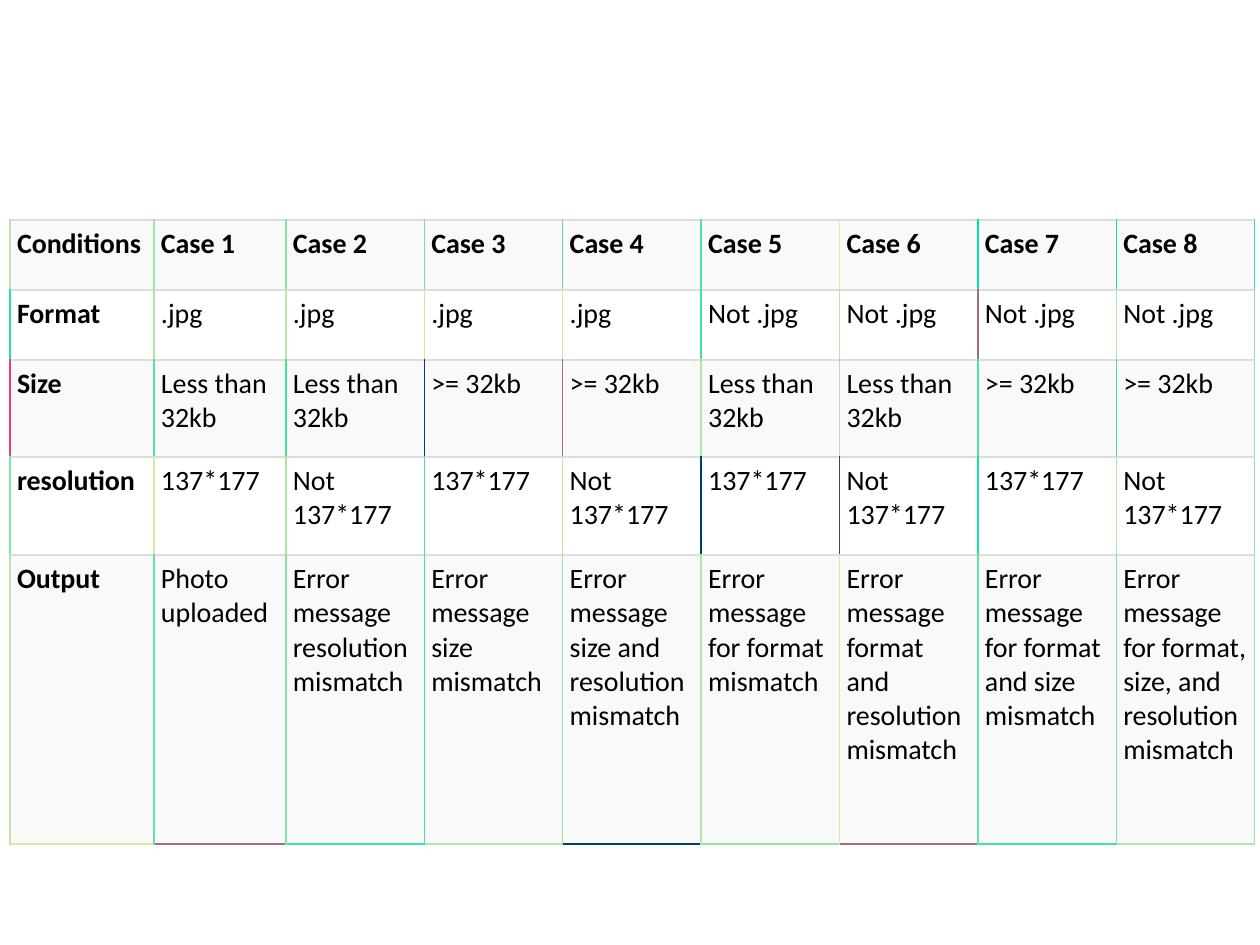
from lxml.etree import SubElement
from pptx import Presentation
from pptx.dml.color import RGBColor
from pptx.oxml.ns import qn
from pptx.util import Pt

PX = 914400 / 126
PAGE_WIDTH, PAGE_HEIGHT = 1260, 945
TABLE_BOX = (10, 220, 1245, 624)
FIRST_COLUMNS = (144, 132)
ROW_HEIGHTS = (70, 70, 97, 98, 289)
CELL_MARGIN = 7
STRIPES = ("F9F9F9", "FFFFFF")
GRID_LINE = ("DDDDDD", 0.75)

ROWS = [
    ["Conditions"] + [f"Case {number}" for number in range(1, 9)],
    ["Format"] + [".jpg"] * 4 + ["Not .jpg"] * 4,
    ["Size"] + (["Less than 32kb"] * 2 + [">= 32kb"] * 2) * 2,
    ["resolution"] + ["137*177", "Not 137*177"] * 4,
    ["Output", "Photo uploaded",
     "Error message resolution mismatch",
     "Error message size mismatch",
     "Error message size and resolution mismatch",
     "Error message for format mismatch",
     "Error message format and resolution mismatch",
     "Error message for format and size mismatch",
     "Error message for format, size, and resolution mismatch"],
]

# Colours of the ten vertical lines in each row, from left to right
VERTICALS = [line.split() for line in (
    "C0E1A5 A0E5A5 80E5A5 70E5A5 60E5A5 50E5A5 F0E5A5 00E6A5 10E6A5 30E5A5",
    "20E6A5 B0E5A5 C0E5A5 D0E5A5 E0E5A5 40E3A5 C0E4A5 A06E82 B0E4A5 90E6A5",
    "F03E74 50E3A5 40E3A5 003F74 A06E82 B0E4A5 B0E5A5 50E3A5 40E3A5 90E6A5",
    "80E6A5 E0E5A5 B0E4A5 40E5A5 C0E5A5 003F74 403E74 10E5A5 B0E4A5 90E6A5",
    "C0E4A5 60E3A5 80E6A5 40E6A5 A0E5A5 B0E4A5 E0E5A5 60E3A5 80E6A5 90E6A5",
)]
BOTTOM_EDGE = ("E0E5A5 A06E82 40E5A5 B0E5A5 003F74 "
               "90E5A5 A06E82 40E5A5 B0E5A5").split()


def px(length):
    return round(length * PX)


def color(value):
    return RGBColor.from_string(value)


def set_borders(cell, borders):
    """Put the border lines, keyed by side, ahead of the cell's fill."""
    properties = cell._tc.get_or_add_tcPr()
    for position, side in enumerate("LRTB"):
        value, width = borders[side]
        line = SubElement(properties, qn(f"a:ln{side}"), w=str(Pt(width)))
        fill = SubElement(line, qn("a:solidFill"))
        SubElement(fill, qn("a:srgbClr"), val=value)
        properties.insert(position, line)


def fill_cell(cell, text, background, bold):
    cell.fill.solid()
    cell.fill.fore_color.rgb = color(background)
    for side in ("left", "right", "top", "bottom"):
        setattr(cell, f"margin_{side}", px(CELL_MARGIN))
    span = cell.text_frame.paragraphs[0].add_run()
    span.text = text
    for name, value in {"name": "Calibri", "size": Pt(16), "bold": bold}.items():
        setattr(span.font, name, value)
    span.font.color.rgb = color("000000")


def add_case_table(page, box):
    left, top, width, height = box
    last_row, column_count = len(ROWS) - 1, len(ROWS[0])
    table = page.shapes.add_table(
        len(ROWS), column_count, px(left), px(top), px(width), px(height)).table

    rest = column_count - len(FIRST_COLUMNS)
    case_width = (width - sum(FIRST_COLUMNS)) / rest
    for column, size in zip(table.columns, [*FIRST_COLUMNS] + [case_width] * rest):
        column.width = px(size)
    for row, size in zip(table.rows, ROW_HEIGHTS):
        row.height = px(size)

    for row, texts in enumerate(ROWS):
        for column, text in enumerate(texts):
            cell = table.cell(row, column)
            fill_cell(cell, text, STRIPES[row % 2], row == 0 or column == 0)
            set_borders(cell, {
                "L": (VERTICALS[row][column], 1),
                "R": (VERTICALS[row][column + 1], 1),
                "T": GRID_LINE,
                "B": (BOTTOM_EDGE[column], 1) if row == last_row else GRID_LINE,
            })


def main():
    deck = Presentation()
    deck.slide_width, deck.slide_height = px(PAGE_WIDTH), px(PAGE_HEIGHT)
    page = deck.slides.add_slide(deck.slide_layouts[6])
    add_case_table(page, TABLE_BOX)
    deck.save("out.pptx")


if __name__ == "__main__":
    main()
